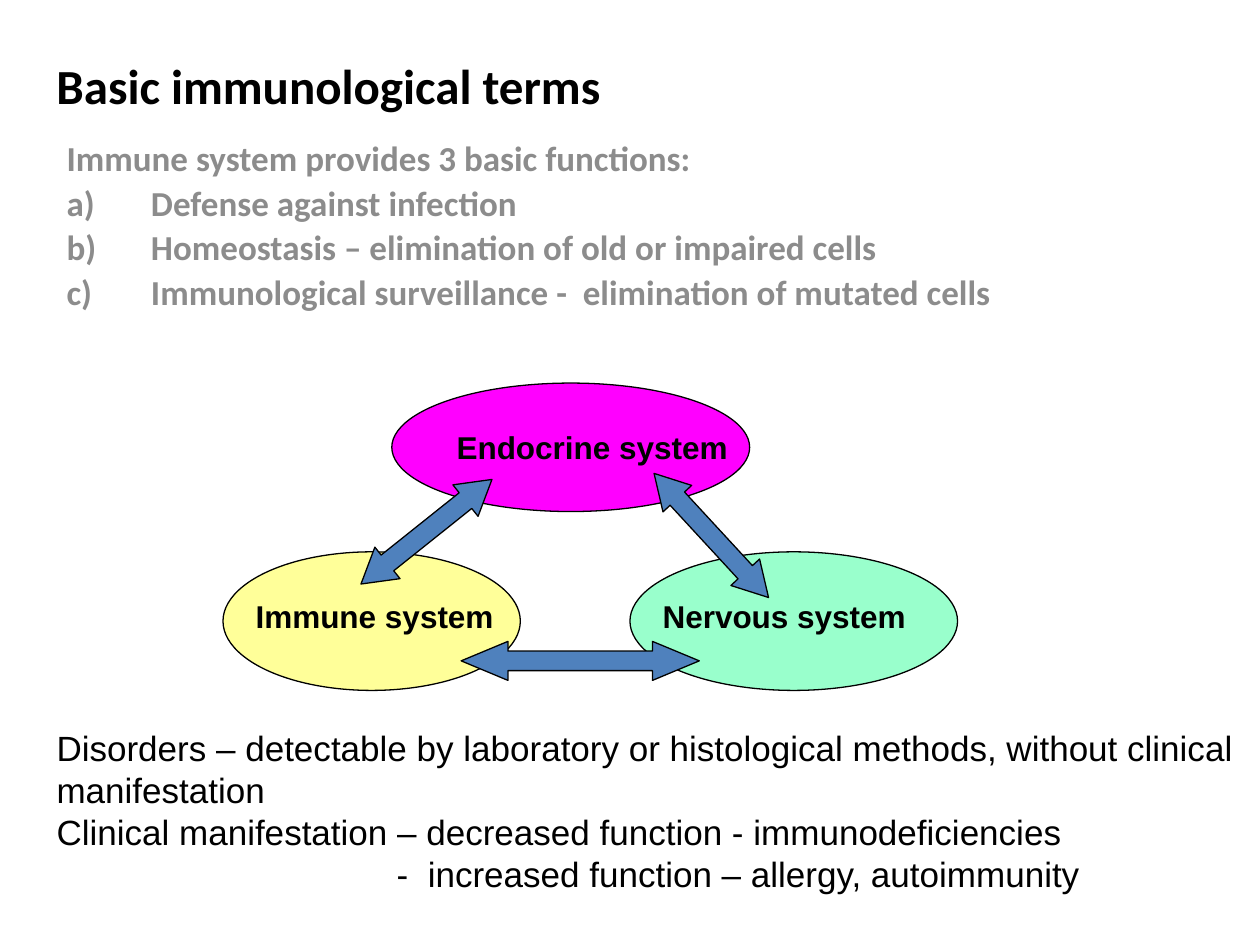
from lxml.etree import SubElement
from pptx import Presentation
from pptx.dml.color import RGBColor
from pptx.enum.shapes import MSO_SHAPE
from pptx.enum.text import MSO_ANCHOR, PP_ALIGN
from pptx.oxml.ns import qn
from pptx.util import Inches, Pt

WIDTH, HEIGHT = Inches(10), Inches(7.5)
COLUMN, ROW = WIDTH / 100, HEIGHT / 75

COLORS = {
    "text": "000000",
    "muted": "8C8C8C",
    "immune": "FFFF99",
    "nervous": "99FFCC",
    "endocrine": "FF00FF",
    "arrow": "4F81BD",
}


def color(name):
    return RGBColor.from_string(COLORS[name])


def place(left, top, width, height):
    """Turn grid columns and rows into slide lengths."""
    return (round(left * COLUMN), round(top * ROW),
            round(width * COLUMN), round(height * ROW))


def write(frame, lines, size, font="Arial", bold=False, ink="text", wrap=True):
    frame.text = "\n".join(lines)
    frame.word_wrap = wrap
    for para in frame.paragraphs:
        para.alignment = PP_ALIGN.LEFT
        for span in para.runs:
            span.font.name = font
            span.font.size = Pt(size)
            span.font.bold = bold
            span.font.color.rgb = color(ink)


def add_text(page, grid, lines, size, **style):
    frame = page.shapes.add_textbox(*place(*grid)).text_frame
    write(frame, lines, size, **style)
    return frame


def add_outlined(page, kind, grid, fill):
    shape = page.shapes.add_shape(kind, *place(*grid))
    shape.shadow.inherit = False
    shape.fill.solid()
    shape.fill.fore_color.rgb = color(fill)
    shape.line.color.rgb = color("text")
    shape.line.width = Pt(0.75)
    return shape


def add_double_arrow(page, grid, head, rotation=0):
    arrow = add_outlined(page, MSO_SHAPE.LEFT_RIGHT_ARROW, grid, "arrow")
    arrow.adjustments[0] = 0.5
    arrow.adjustments[1] = head
    arrow.rotation = rotation


def set_hanging_list(paragraphs):
    """Hang every paragraph and letter all but the first as a), b), c)."""
    indent = round(6.7 * COLUMN)
    for index, para in enumerate(paragraphs):
        para.line_spacing = 0.9
        para.space_before = Pt(4)
        properties = para._p.get_or_add_pPr()
        properties.set("marL", str(indent))
        properties.set("indent", str(-indent))
        if index:
            SubElement(properties, qn("a:buAutoNum"), type="alphaLcParenR")


def add_functions(page):
    frame = add_text(page, (4.3, 10.7, 89, 19.2), [
        "Immune system provides 3 basic functions:",
        "Defense against infection",
        "Homeostasis – elimination of old or impaired cells",
        "Immunological surveillance -  elimination of mutated cells",
    ], 20, font="Calibri", bold=True, ink="muted")
    set_hanging_list(frame.paragraphs)


def add_systems(page):
    add_outlined(page, MSO_SHAPE.OVAL, (17.7, 43.8, 23.6, 11), "immune")
    add_outlined(page, MSO_SHAPE.OVAL, (50, 43.8, 26, 11), "nervous")
    endocrine = add_outlined(page, MSO_SHAPE.OVAL, (31.1, 30.4, 28.4, 10.2), "endocrine")
    endocrine.text_frame.vertical_anchor = MSO_ANCHOR.MIDDLE
    write(endocrine.text_frame, ["Endocrine system"], 18, bold=True, wrap=False)
    add_text(page, (19.3, 46.9, 20.9, 4), ["Immune system"], 18, bold=True, wrap=False)
    add_text(page, (51.6, 46.9, 24.9, 4), ["Nervous system"], 18, bold=True)

    add_double_arrow(page, (27.2, 40.6, 13.3, 3.2), 0.84, 321.4)
    add_double_arrow(page, (49.75, 40.95, 13.4, 3.1), 0.88, 47.3)
    add_double_arrow(page, (36.6, 50.9, 18.9, 3.1), 1.2)


def add_disorders(page):
    frame = add_text(page, (3.5, 57.2, 96.5, 14.3), [
        "Disorders – detectable by laboratory or histological methods, "
        "without clinical manifestation",
        "Clinical manifestation – decreased function - immunodeficiencies",
        "-  increased function – allergy, autoimmunity",
    ], 20)
    last_line = frame.paragraphs[-1]._p.get_or_add_pPr()
    last_line.set("marL", str(round(27 * COLUMN)))


def main():
    deck = Presentation()
    deck.slide_width, deck.slide_height = WIDTH, HEIGHT
    page = deck.slides.add_slide(deck.slide_layouts[6])
    title = add_text(page, (3.5, 3.6, 85, 6.3), ["Basic immunological terms"],
                     28, font="Calibri", bold=True)
    title.vertical_anchor = MSO_ANCHOR.MIDDLE
    add_functions(page)
    add_systems(page)
    add_disorders(page)
    deck.save("out.pptx")


if __name__ == "__main__":
    main()
